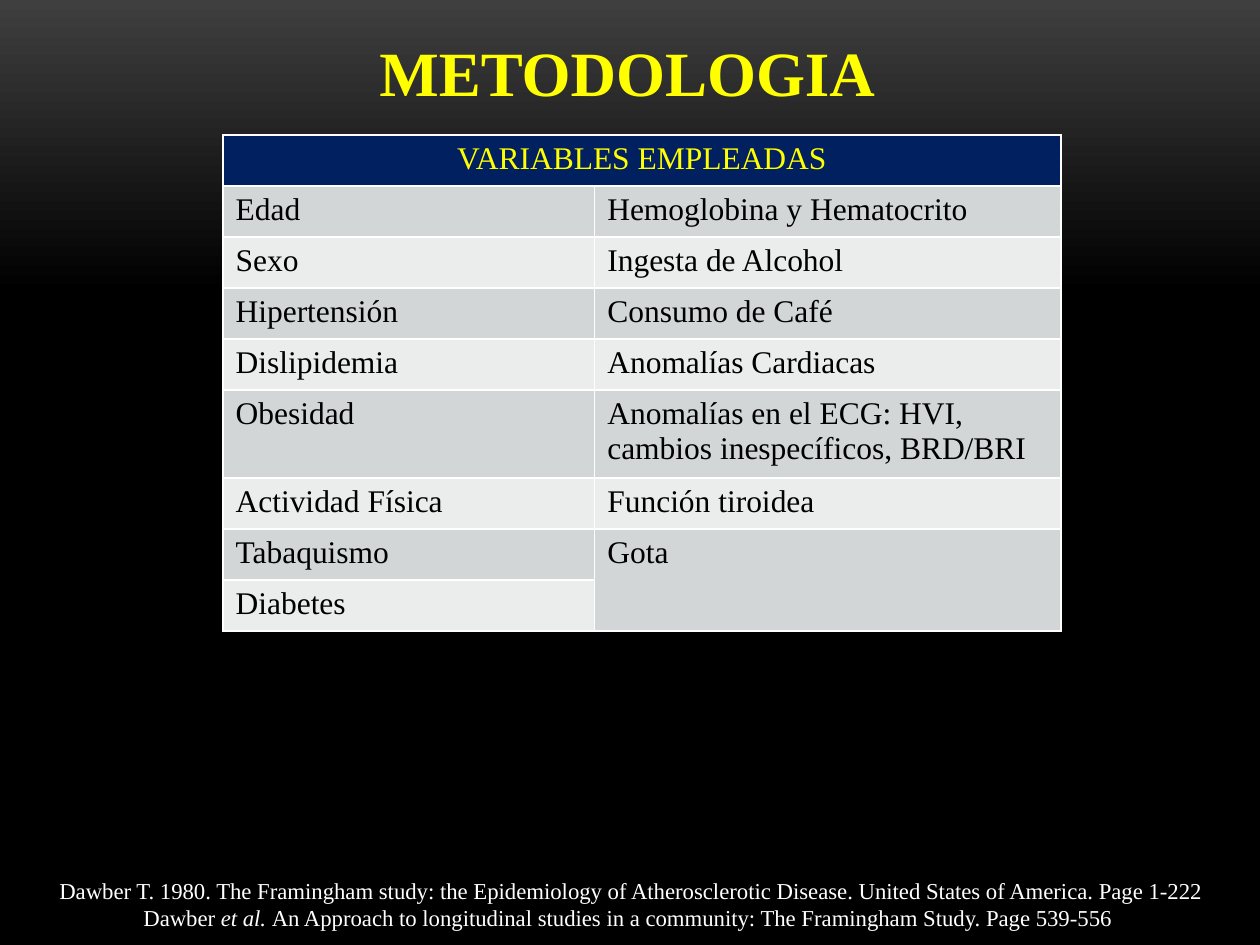
"""Build the METODOLOGIA slide with its table of study variables."""
from lxml import etree
from pptx import Presentation, util as u
from pptx.dml.color import RGBColor
from pptx.enum import text
from pptx.oxml.ns import qn

COLORS = {"top": "3F3F3F", "black": "000000", "white": "FFFFFF", "yellow": "FFFF00",
          "navy": "002060", "dark_band": "D3D6D7", "light_band": "EBECEC"}
VARIABLES = [
    ("Edad", "Hemoglobina y Hematocrito"),
    ("Sexo", "Ingesta de Alcohol"),
    ("Hipertensión", "Consumo de Café"),
    ("Dislipidemia", "Anomalías Cardiacas"),
    ("Obesidad", "Anomalías en el ECG: HVI, cambios inespecíficos, BRD/BRI"),
    ("Actividad Física", "Función tiroidea"),
    ("Tabaquismo", "Gota"),
    ("Diabetes", ""),
]
REFERENCES = [
    [("Dawber T. 1980. The Framingham study: the Epidemiology of Atherosclerotic Disease. "
      "United States of America. Page 1-222", False)],
    [("Dawber ", False), ("et al. ", True),
     ("An Approach to longitudinal studies in a community: The Framingham Study. "
      "Page 539-556 ", False)],
]


def style(font, size, color, bold=False, italic=False):
    font.name, font.size = "Times New Roman", u.Pt(size)
    font.bold, font.italic = bold, italic
    font.color.rgb = RGBColor.from_string(COLORS[color])


presentation = Presentation()
presentation.slide_width, presentation.slide_height = u.Inches(10), u.Inches(7.5)
width, height = presentation.slide_width, presentation.slide_height
slide = presentation.slides.add_slide(presentation.slide_layouts[6])

background = slide.background.fill
background.gradient()
background.gradient_angle = 270
for stop, color, position in zip(background.gradient_stops, ("top", "black"), (0, 0.31)):
    stop.color.rgb = RGBColor.from_string(COLORS[color])
    stop.position = position

row_height = int(height * 0.054)
column_widths = [int(width * 0.295), int(width * 0.37)]
table = slide.shapes.add_table(
    len(VARIABLES) + 1, 2, int(width * 0.177), int(height * 0.143),
    sum(column_widths), row_height * (len(VARIABLES) + 1)).table
for column, column_width in zip(table.columns, column_widths):
    column.width = column_width
for row in table.rows:
    row.height = row_height
table.rows[5].height = int(height * 0.093)

for row_index, labels in enumerate([("VARIABLES EMPLEADAS", "")] + VARIABLES):
    header = row_index == 0
    band = "navy" if header else "dark_band" if row_index % 2 else "light_band"
    for column_index, label in enumerate(labels):
        cell = table.cell(row_index, column_index)
        cell.text_frame.text = label
        paragraph = cell.text_frame.paragraphs[0]
        paragraph.alignment = text.PP_ALIGN.CENTER if header else text.PP_ALIGN.LEFT
        style(paragraph.font, 18, "yellow" if header else "black")
        for run in paragraph.runs:
            style(run.font, 18, "yellow" if header else "black")
        properties = cell._tc.get_or_add_tcPr()
        for side in ("lnL", "lnR", "lnT", "lnB"):
            border = etree.SubElement(properties, qn(f"a:{side}"), w=str(u.Pt(1)))
            line_fill = etree.SubElement(border, qn("a:solidFill"))
            etree.SubElement(line_fill, qn("a:srgbClr"), val=COLORS["white"])
        cell.fill.solid()
        cell.fill.fore_color.rgb = RGBColor.from_string(COLORS[band])
table.cell(0, 0).merge(table.cell(0, 1))
table.cell(7, 1).merge(table.cell(8, 1))

references = slide.shapes.add_textbox(0, int(height * 0.921), width, int(height * 0.072))
references.text_frame.word_wrap = True
for index, pieces in enumerate(REFERENCES):
    frame = references.text_frame
    paragraph = frame.add_paragraph() if index else frame.paragraphs[0]
    paragraph.alignment = text.PP_ALIGN.CENTER
    for words, italic in pieces:
        run = paragraph.add_run()
        run.text = words
        style(run.font, 13, "white", italic=italic)

title = slide.shapes.add_textbox(
    int(width * 0.275), int(height * 0.021), int(width * 0.446), int(height * 0.11))
title.text_frame.word_wrap = True
title.text_frame.vertical_anchor = text.MSO_ANCHOR.MIDDLE
title.text_frame.text = "METODOLOGIA"
paragraph = title.text_frame.paragraphs[0]
paragraph.alignment = text.PP_ALIGN.CENTER
style(paragraph.runs[0].font, 36, "yellow", bold=True)

presentation.save("out.pptx")
